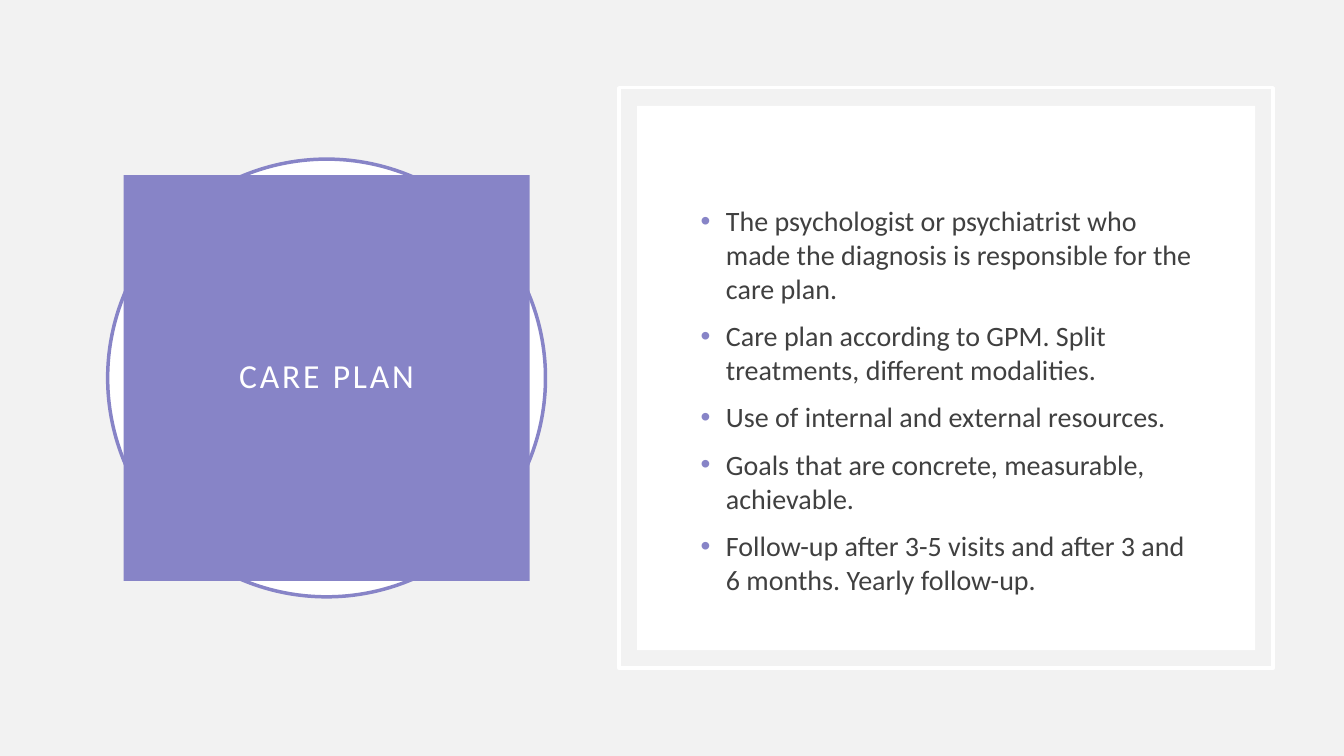
from dataclasses import dataclass

from lxml.etree import SubElement
from pptx import Presentation
from pptx.dml.color import RGBColor
from pptx.enum.shapes import MSO_SHAPE
from pptx.enum.text import MSO_ANCHOR, MSO_AUTO_SIZE, PP_ALIGN
from pptx.oxml.ns import qn
from pptx.util import Inches, Pt


@dataclass(frozen=True)
class Theme:
    backdrop = RGBColor.from_string("F2F2F2")
    accent = RGBColor.from_string("8784C7")
    white = RGBColor.from_string("FFFFFF")
    body = RGBColor.from_string("404040")
    font = "Calibri"
    title_size = Pt(24)
    body_size = Pt(20)
    outline = Pt(2.5)


theme = Theme()
deck = Presentation()
deck.slide_width, deck.slide_height = Inches(13.33), Inches(7.5)
slide = deck.slides.add_slide(deck.slide_layouts[5])
slide.background.fill.solid()
slide.background.fill.fore_color.rgb = theme.backdrop

BADGE_X, PANEL_X = 24.3, 70.4
MIDDLE = 50
POINTS = [
    "The psychologist or psychiatrist who made the diagnosis is responsible for the care plan.",
    "Care plan according to GPM. Split treatments, different modalities.",
    "Use of internal and external resources.",
    "Goals that are concrete, measurable, achievable.",
    "Follow-up after 3-5 visits and after 3 and 6 months. Yearly follow-up.",
]


def centred(x, y, width, height):
    """Box around a centre in % of the slide; its sides are in % of slide height."""
    w, h = (int(deck.slide_height * side / 100) for side in (width, height))
    left = int(deck.slide_width * x / 100 - w / 2)
    top = int(deck.slide_height * y / 100 - h / 2)
    return left, top, w, h


def add_backing(kind, box, fill, line):
    backing = slide.shapes.add_shape(kind, *box)
    backing.shadow.inherit = False
    if fill is None:
        backing.fill.background()
    else:
        backing.fill.solid()
        backing.fill.fore_color.rgb = fill
    if line is None:
        backing.line.fill.background()
    else:
        backing.line.color.rgb = line
        backing.line.width = theme.outline


add_backing(MSO_SHAPE.OVAL, centred(BADGE_X, MIDDLE, 57.9, 57.9), theme.white, theme.accent)

# The title sits on top of the ring
title = slide.shapes.title
slide.shapes._spTree.append(title._element)
title.left, title.top, title.width, title.height = centred(BADGE_X, MIDDLE, 53.7, 53.7)
title.fill.solid()
title.fill.fore_color.rgb = theme.accent
heading = title.text_frame
heading.text = "CARE PLAN"
heading.word_wrap = True
heading.auto_size = MSO_AUTO_SIZE.NONE
heading.vertical_anchor = MSO_ANCHOR.MIDDLE
heading.margin_left = heading.margin_right = Inches(0.2)
heading.margin_top = heading.margin_bottom = Inches(0.2)
heading_line = heading.paragraphs[0]
heading_line.alignment = PP_ALIGN.CENTER
heading_line.line_spacing = 0.9
heading_run = heading_line.runs[0]
heading_run.font.name = theme.font
heading_run.font.size = theme.title_size
heading_run.font.color.rgb = theme.white
heading_run.font._element.set("spc", "200")

add_backing(MSO_SHAPE.RECTANGLE, centred(PANEL_X, MIDDLE, 86.5, 76.8), None, theme.white)
add_backing(MSO_SHAPE.RECTANGLE, centred(PANEL_X, MIDDLE, 81.7, 72), theme.white, None)

plan = slide.shapes.add_textbox(*centred(PANEL_X + 0.1, 52.9, 67.9, 54)).text_frame
plan.word_wrap = True
plan.vertical_anchor = MSO_ANCHOR.MIDDLE
for number, point in enumerate(POINTS):
    item = plan.add_paragraph() if number else plan.paragraphs[0]
    item.text = point
    if number:
        item.space_before = Pt(10)
    indents = item._element.get_or_add_pPr()
    indents.set("marL", str(Inches(0.25)))
    indents.set("indent", str(-Inches(0.25)))
    bullet_colour = SubElement(indents, qn("a:buClr"))
    SubElement(bullet_colour, qn("a:srgbClr"), val=str(theme.accent))
    SubElement(indents, qn("a:buFont"), typeface="Arial")
    SubElement(indents, qn("a:buChar"), char="•")
    item.runs[0].font.name = theme.font
    item.runs[0].font.size = theme.body_size
    item.runs[0].font.color.rgb = theme.body

deck.save("out.pptx")
